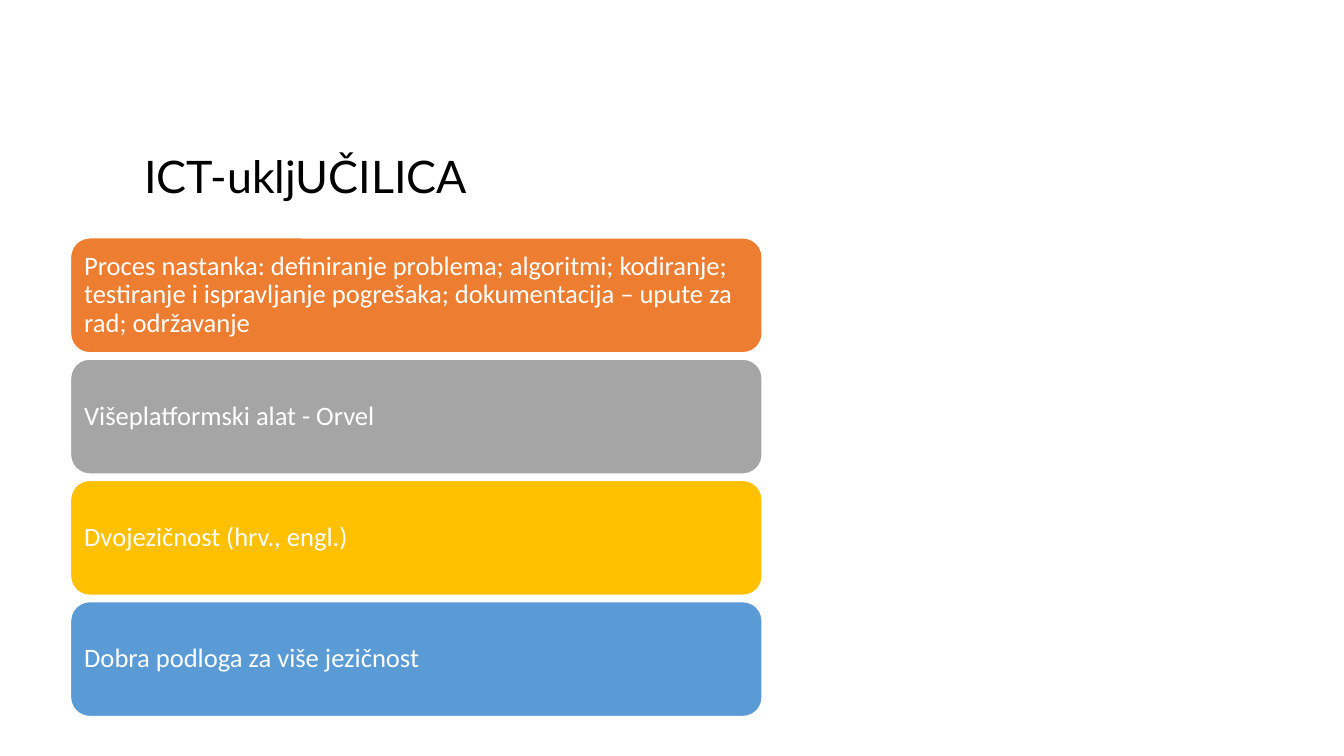
from pptx import Presentation
from pptx.dml.color import RGBColor
from pptx.enum import shapes, text
from pptx.util import Inches, Pt

TITLE = "ICT-ukljUČILICA"
BARS = [
    ("Proces nastanka: definiranje problema; algoritmi; kodiranje; testiranje i "
     "ispravljanje pogrešaka; dokumentacija – upute za rad; održavanje", "ED7D31"),
    ("Višeplatformski alat - Orvel", "A5A5A5"),
    ("Dvojezičnost (hrv., engl.)", "FFC000"),
    ("Dobra podloga za više jezičnost", "5B9BD5"),
]
BAR_LEFT, BAR_TOP, BAR_WIDTH, BAR_HEIGHT = 0.7, 2.36, 6.86, 1.14
BAR_STEP = 1.203
BAR_INSET = Inches(0.08)


def color(value):
    return RGBColor.from_string(value)


def format_text(paragraph, name, size, value):
    paragraph.alignment = text.PP_ALIGN.LEFT
    paragraph.line_spacing = 0.9
    paragraph.font.name = name
    paragraph.font.size = Pt(size)
    paragraph.font.color.rgb = color(value)


def add_title(slide):
    title = slide.shapes.title
    title.left, title.top = Inches(1.33), Inches(1.49)
    title.width, title.height = Inches(5.35), Inches(0.64)
    frame = title.text_frame
    frame.text = TITLE
    frame.auto_size = text.MSO_AUTO_SIZE.NONE
    frame.vertical_anchor = text.MSO_ANCHOR.TOP
    format_text(frame.paragraphs[0], "Lato", 32, "000000")


def add_bar(slide, index, label, fill):
    bar = slide.shapes.add_shape(
        shapes.MSO_SHAPE.ROUNDED_RECTANGLE,
        Inches(BAR_LEFT), Inches(BAR_TOP + index * BAR_STEP),
        Inches(BAR_WIDTH), Inches(BAR_HEIGHT))
    bar.shadow.inherit = False
    bar.fill.solid()
    bar.fill.fore_color.rgb = color(fill)
    bar.line.color.rgb = color("FFFFFF")
    bar.line.width = Pt(1)
    frame = bar.text_frame
    frame.text = label
    frame.word_wrap = True
    frame.vertical_anchor = text.MSO_ANCHOR.MIDDLE
    frame.margin_left = frame.margin_right = BAR_INSET
    frame.margin_top = frame.margin_bottom = BAR_INSET
    format_text(frame.paragraphs[0], "Calibri", 19, "FFFFFF")


def main():
    presentation = Presentation()
    presentation.slide_width = Inches(13.33)
    presentation.slide_height = Inches(7.5)
    slide = presentation.slides.add_slide(presentation.slide_layouts[5])
    add_title(slide)
    for index, (label, fill) in enumerate(BARS):
        add_bar(slide, index, label, fill)
    presentation.save("out.pptx")


if __name__ == "__main__":
    main()
